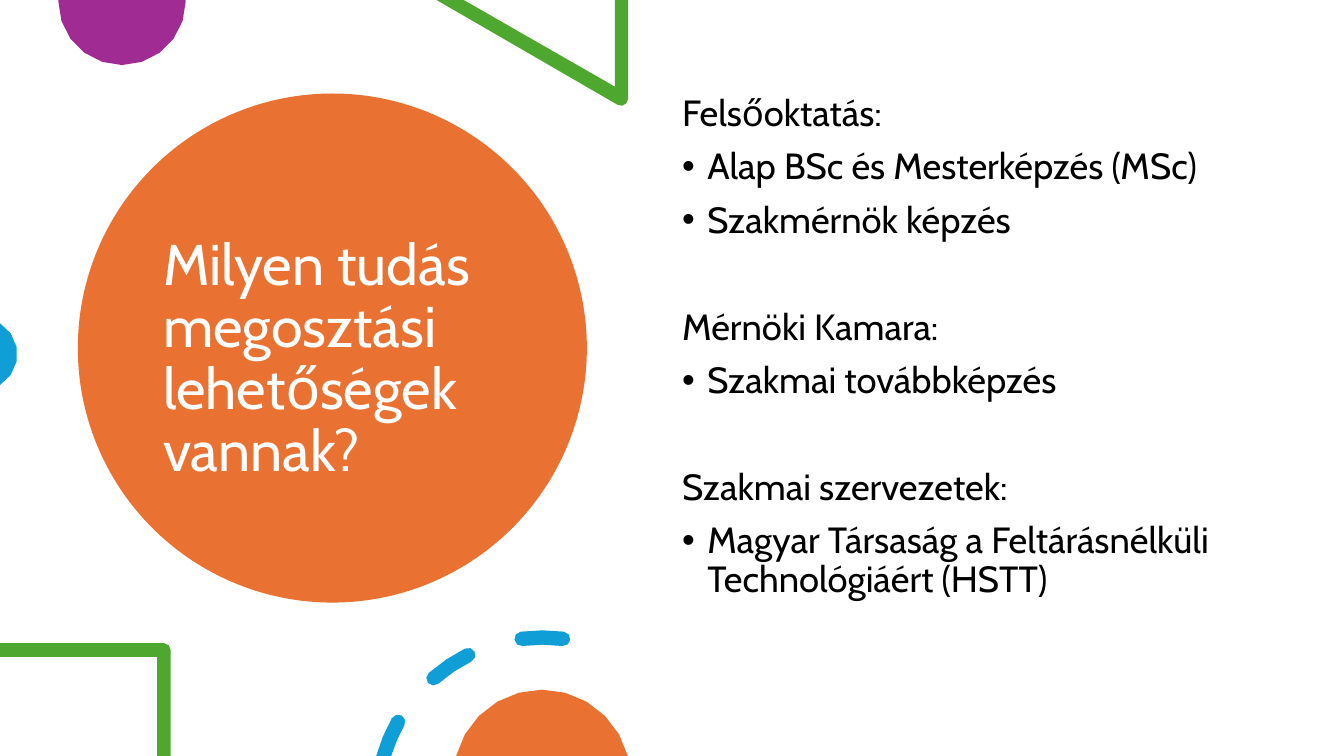
import math

import pptx
import pptx.dml.color
import pptx.enum.shapes
import pptx.enum.text
import pptx.util
from lxml import etree

Pt = pptx.util.Pt
RGB = pptx.dml.color.RGBColor
ORANGE = RGB(0xE9, 0x71, 0x32)
PURPLE = RGB(0xA0, 0x2B, 0x93)
GREEN = RGB(0x4E, 0xA7, 0x2E)
BLUE = RGB(0x0F, 0x9E, 0xD5)
WHITE = RGB(0xFF, 0xFF, 0xFF)
BLACK = RGB(0, 0, 0)
FONT = "Cabin"
INDENT = 18
GAP = 10
BREAK = 48.3  # space above a new group
SAG = 0.6  # largest gap between a chord and its arc

TITLE = "Milyen tudás megosztási lehetőségek vannak?"
GROUPS = [
    ("Felsőoktatás:", ["Alap BSc és Mesterképzés (MSc)", "Szakmérnök képzés"]),
    ("Mérnöki Kamara:", ["Szakmai továbbképzés"]),
    ("Szakmai szervezetek:",
     ["Magyar Társaság a Feltárásnélküli Technológiáért (HSTT)"]),
]


def arc(x, y, r, start, end):
    """Points on a circle; degrees run clockwise from the right."""
    step = 2 * math.degrees(math.acos(1 - SAG / r))
    n = max(1, math.ceil(abs(end - start) / step))
    turns = [math.radians(start + (end - start) * i / n) for i in range(n + 1)]
    return [(x + r * math.cos(t), y + r * math.sin(t)) for t in turns]


def dash(x, y, r, width, start, end, edge=None):
    """Outline of a curved stroke with round ends, or cut flat at edge."""
    half = width / 2

    def cap(angle, turn):
        cx, cy = arc(x, y, r, angle, angle)[0]
        return arc(cx, cy, half, angle + turn, angle + turn + 180)[1:-1]

    def first(radius):
        if edge is None:
            return start
        return math.degrees(math.asin((y - edge) / radius)) - 180

    tail = cap(start, 180) if edge is None else []
    return (arc(x, y, r + half, first(r + half), end) + cap(end, 0)
            + arc(x, y, r - half, end, first(r - half)) + tail)


def paint(shape, color):
    shape.shadow.inherit = False
    shape.fill.solid()
    shape.fill.fore_color.rgb = color
    shape.line.fill.background()


def draw(slide, box, color, *loops):
    """Fill closed outlines given relative to the box."""
    left, top = box[:2]
    pen = None
    for loop in loops:
        first, *rest = [(Pt(left + x), Pt(top + y)) for x, y in loop]
        if pen is None:
            pen = slide.shapes.build_freeform(*first, scale=1.0)
        else:
            pen.move_to(*first)
        pen.add_line_segments(rest, close=True)
    paint(pen.convert_to_shape(), color)


def write(para, text, size, color, before=0, bullet=False):
    if bullet:
        props = para._p.get_or_add_pPr()
        props.set("marL", str(Pt(INDENT)))
        props.set("indent", str(-Pt(INDENT)))
        space = props.nsmap["a"]
        font = etree.SubElement(props, f"{{{space}}}buFont")
        font.set("typeface", "Arial")
        mark = etree.SubElement(props, f"{{{space}}}buChar")
        mark.set("char", "•")
    para.line_spacing = 0.9
    if before:
        para.space_before = Pt(before)
    run = para.add_run()
    run.text = text
    run.font.name = FONT
    run.font.size = Pt(size)
    run.font.color.rgb = color


def frame(slide, box, anchor):
    text = slide.shapes.add_textbox(*map(Pt, box)).text_frame
    text.word_wrap = True
    text.vertical_anchor = anchor
    return text


def heading(slide, box):
    left, top, width, height = box
    disc = slide.shapes.add_shape(
        pptx.enum.shapes.MSO_SHAPE.OVAL, *map(Pt, box))
    paint(disc, ORANGE)
    area = (left + 53.8, top + 30.3, width - 108.7, height - 43.2)
    text = frame(slide, area, pptx.enum.text.MSO_ANCHOR.MIDDLE)
    write(text.paragraphs[0], TITLE, 41, WHITE)


def listing(slide, box):
    text = frame(slide, box, pptx.enum.text.MSO_ANCHOR.TOP)
    for i, (head, items) in enumerate(GROUPS):
        para = text.add_paragraph() if i else text.paragraphs[0]
        write(para, head, 26, BLACK, before=BREAK if i else 0)
        for item in items:
            write(text.add_paragraph(), item, 26, BLACK,
                  before=GAP, bullet=True)


def header(slide, box):
    # Cut-off disc and triangle corner
    draw(slide, box, PURPLE,
         [(132.7, 0)] + arc(87.2, 1, 45.5, 0, 180) + [(41.7, 0)])
    draw(slide, box, GREEN,
         [(448.6, 0), (439.2, 0), (439.2, 61.9), (331.2, 0), (311.8, 0)]
         + arc(443.7, 70.7, 4.9, 120, 0))


def side(slide, box):
    mid = box[3] / 2
    draw(slide, box, BLUE, arc(-13.4, mid, 25.8, -58.6, 58.6))


def footer(slide, box):
    height = box[3]
    # Square corner
    draw(slide, box, GREEN,
         [(0, 9.4)] + arc(117.2, 14.1, 4.7, -90, 0)
         + [(121.9, height), (112.3, height), (112.3, 19.2), (0, 19.2)])
    # Dashed ring; the lowest dash ends flat at the slide edge
    ring = (387.4, 123.6, 118.2, 10.3)
    draw(slide, box, BLUE,
         dash(*ring, None, -150.6, edge=height),
         dash(*ring, -131.1, -116.6), dash(*ring, -97.2, -82.8))
    # Cut-off disc
    draw(slide, box, ORANGE, arc(387.1, 106, 63.4, -165.4, -14.6))


def main():
    deck = pptx.Presentation()
    deck.slide_width, deck.slide_height = Pt(960), Pt(540)
    slide = deck.slides.add_slide(deck.slide_layouts[6])
    header(slide, (0, 0, 480, 75))
    side(slide, (0, 231, 12.4, 44))
    footer(slide, (0, 450, 480, 90))
    heading(slide, (55.6, 66.8, 363.6, 363.6))
    listing(slide, (480.2, 64.5, 414, 385.2))
    deck.save("out.pptx")


if __name__ == "__main__":
    main()
